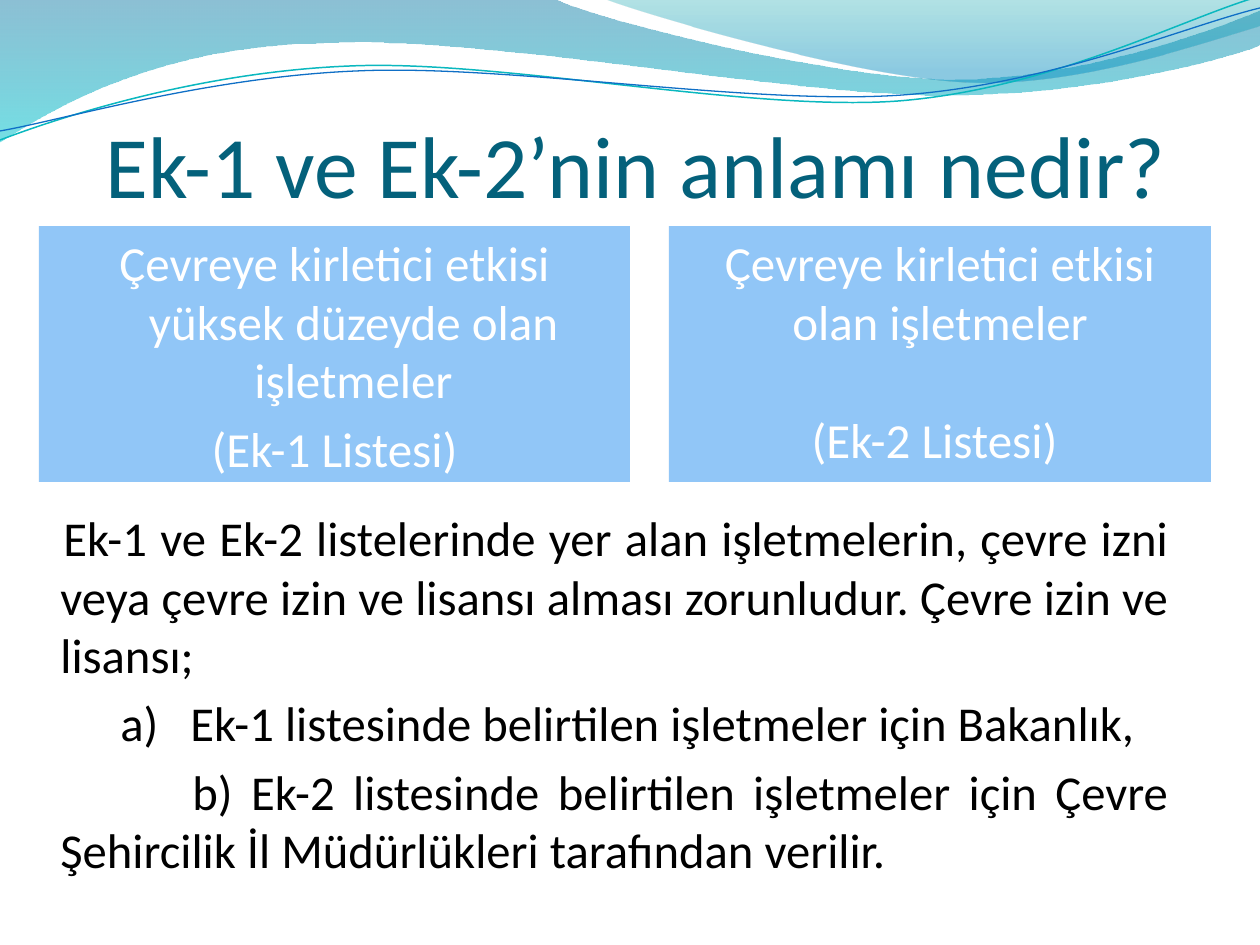
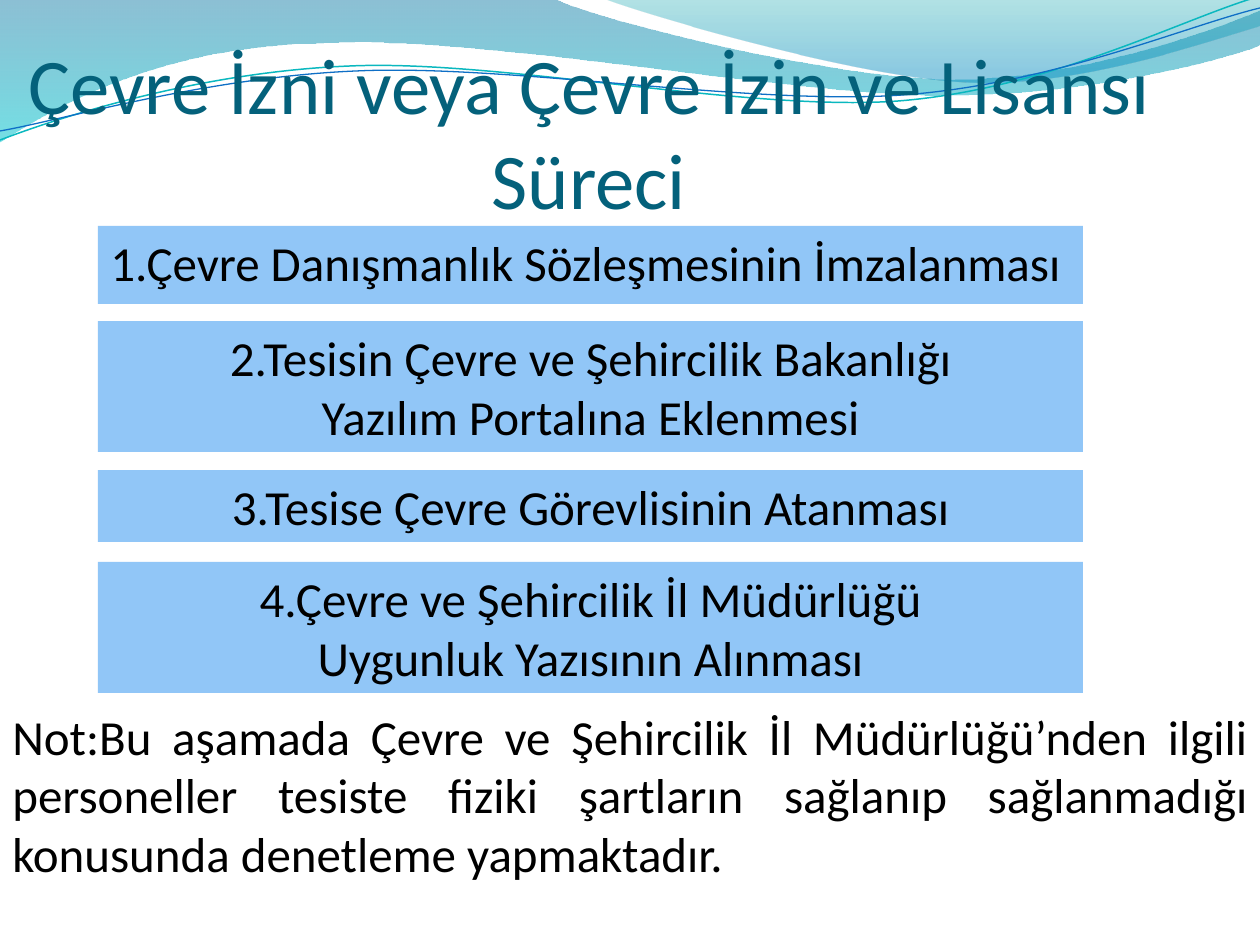
from lxml.etree import SubElement
from pptx import Presentation
from pptx.dml.color import RGBColor as RGB
from pptx.enum.shapes import MSO_SHAPE as Preset
from pptx.enum.text import MSO_ANCHOR as Anchor, MSO_AUTO_SIZE as AutoSize, PP_ALIGN as Align
from pptx.oxml.ns import qn
from pptx.util import Pt

SCALE = 914400 / 126
FONT = "Calibri"
COLORS = {
    "title": "04617B", "box": "91C6F7", "black": "000000", "white": "FFFFFF",
    "deep": "0074A1", "aqua": "00C6CF", "teal": "00A1A9", "azure": "008BBF",
    "teal_line": "0AB8BF", "blue_line": "0F6FC6",
}


def px(length):
    return round(length * SCALE)


def write(frame, lines, size, color, align, gap=0, indents=None):
    frame.word_wrap = True
    frame.auto_size = AutoSize.NONE
    frame.text = "\n".join(lines)
    for number, paragraph in enumerate(frame.paragraphs):
        paragraph.alignment = align
        paragraph.space_before = Pt(gap if number else 0)
        if indents:
            margin, first_line = indents[number]
            properties = paragraph._p.get_or_add_pPr()
            properties.set("marL", str(px(margin)))
            properties.set("indent", str(px(first_line)))
        for run in paragraph.runs:
            run.font.name = FONT
            run.font.size = Pt(size)
            run.font.color.rgb = RGB.from_string(COLORS[color])


deck = Presentation()
deck.slide_width, deck.slide_height = px(1260), px(945)
layout = deck.slide_layouts[5]
meaning = deck.slides.add_slide(layout)
process = deck.slides.add_slide(layout)

waves = [
    ([(0, 0)], [[(554, -1)],
                [(600, 21), (837, 79), (955, 79)],
                [(1075, 79), (1207, 33), (1260, 11)],
                [(1261, 45)],
                [(1239, 55), (1096, 96), (940, 95)],
                [(784, 95), (481, 35), (324, 43)],
                [(163, 45), (58, 105), (-1, 142)],
                [(0, 0)]],
     [("deep", 0, 45), ("aqua", 1, 55)], None),
    ([(604, -1)], [[(641, 14), (859, 78), (969, 82)],
                   [(1079, 87), (1211, 40), (1260, 26)],
                   [(1260, 0)],
                   [(604, -1)]],
     [("teal", 0, 30), ("azure", 0.8, 45)], None),
    ([(0, 140)], [[(60, 117), (199, 72), (349, 66)],
                  [(498, 59), (747, 112), (898, 101)],
                  [(1050, 89), (1182, 19), (1257, -3)]],
     None, ("teal_line", 0.85)),
    ([(0, 131)], [[(59, 121), (207, 77), (357, 71)],
                  [(508, 64), (752, 106), (903, 95)],
                  [(1053, 84), (1186, 26), (1260, 8)]],
     None, ("blue_line", 0.75)),
]
for order, (start, segments, stops, stroke) in enumerate(waves):
    outline = [(px(x), px(y)) for x, y in sum(segments, start)]
    builder = meaning.shapes.build_freeform(*outline[0], scale=1.0)
    builder.add_line_segments(outline[1:], close=bool(stops))
    wave = builder.convert_to_shape()
    wave.shadow.inherit = False

    corners = iter(list(wave.element.iter(qn("a:lnTo"))))
    for segment in segments:
        corner = next(corners)
        if len(segment) == 3:
            curve = corner.makeelement(qn("a:cubicBezTo"))
            corner.addprevious(curve)
            for line in (corner, next(corners), next(corners)):
                curve.append(line[0])
                line.getparent().remove(line)

    if stops:
        wave.line.fill.background()
        wave.fill.gradient()
        wave.fill.gradient_angle = 270
        for stop, (color, position, opacity) in zip(wave.fill.gradient_stops, stops):
            stop.color.rgb = RGB.from_string(COLORS[color])
            stop.position = position
        for tint, (color, position, opacity) in zip(wave.element.iter(qn("a:srgbClr")), stops):
            SubElement(tint, qn("a:alpha")).set("val", str(opacity * 1000))
    else:
        wave.fill.background()
        wave.line.color.rgb = RGB.from_string(COLORS[stroke[0]])
        wave.line.width = Pt(stroke[1])
    next(wave.element.iter(qn("p:cNvPr"))).set("id", str(20 + order))
    layout.shapes.element.insert(2 + order, wave.element)

headings = [
    (meaning, "Ek-1 ve Ek-2’nin anlamı nedir?", 50, (69, 90, 1134, 126)),
    (process, "Çevre İzni veya Çevre İzin ve Lisansı Süreci", 45, (22, 52, 1134, 173)),
]
for slide, heading, size, place in headings:
    title = slide.shapes.title
    title.left, title.top, title.width, title.height = map(px, place)
    frame = title.text_frame
    frame.margin_left = frame.margin_right = frame.margin_bottom = 0
    frame.margin_top = px(6)
    frame.vertical_anchor = Anchor.BOTTOM
    write(frame, [heading], size, "title", Align.CENTER)

HANGING = (38, -38)
boxes = [
    (meaning, (39, 226, 591, 256), "white", Align.CENTER, 5.6, [HANGING] * 2,
     ["Çevreye kirletici etkisi yüksek düzeyde olan işletmeler", " (Ek-1 Listesi) "]),
    (meaning, (669, 226, 542, 256), "white", Align.CENTER, 34, None,
     ["Çevreye kirletici etkisi olan işletmeler", "(Ek-2 Listesi) "]),
]
steps = [
    (226, 78, Align.LEFT, [HANGING], ["1.Çevre Danışmanlık Sözleşmesinin İmzalanması"]),
    (321, 131, Align.CENTER, None,
     ["2.Tesisin Çevre ve Şehircilik Bakanlığı", "Yazılım Portalına Eklenmesi"]),
    (470, 72, Align.CENTER, None, ["3.Tesise Çevre Görevlisinin Atanması"]),
    (562, 131, Align.CENTER, None,
     ["4.Çevre ve Şehircilik İl Müdürlüğü", "Uygunluk Yazısının Alınması"]),
]
for top, height, align, indents, lines in steps:
    boxes.append((process, (98, top, 985, height), "black", align, 0, indents, lines))

for slide, place, color, align, gap, indents, lines in boxes:
    box = slide.shapes.add_shape(Preset.RECTANGLE, *map(px, place))
    box.shadow.inherit = False
    box.fill.solid()
    box.fill.fore_color.rgb = RGB.from_string(COLORS["box"])
    box.line.fill.background()
    box.text_frame.vertical_anchor = Anchor.TOP
    write(box.text_frame, lines, 28, color, align, gap, indents)

notes = [
    (meaning, (10, 502, 1172, 394), 27.8, [(38, 3), (168, -70), (38, 132)],
     ["Ek-1 ve Ek-2 listelerinde yer alan işletmelerin, çevre izni veya çevre izin ve lisansı "
      "alması zorunludur. Çevre izin ve lisansı;",
      "a)\tEk-1 listesinde belirtilen işletmeler için Bakanlık,",
      "b) Ek-2 listesinde belirtilen işletmeler için Çevre Şehircilik İl Müdürlükleri "
      "tarafından verilir."]),
    (process, (0, 700, 1260, 190), 28, None,
     ["Not:Bu aşamada Çevre ve Şehircilik İl Müdürlüğü’nden ilgili personeller tesiste fiziki "
      "şartların sağlanıp sağlanmadığı konusunda denetleme yapmaktadır."]),
]
for slide, place, size, indents, lines in notes:
    note = slide.shapes.add_textbox(*map(px, place))
    write(note.text_frame, lines, size, "black", Align.JUSTIFY, 5.6, indents)

deck.save("out.pptx")
